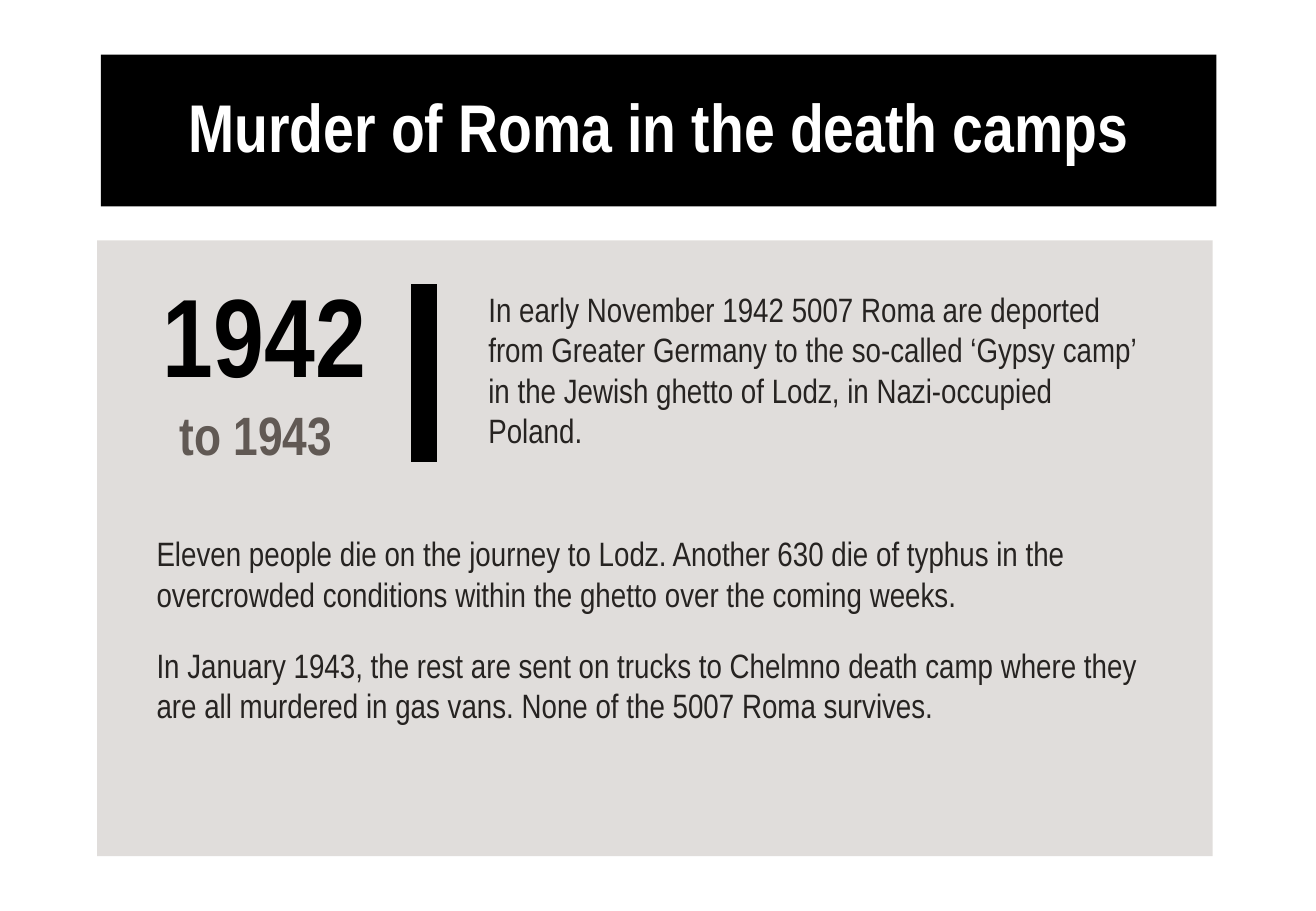
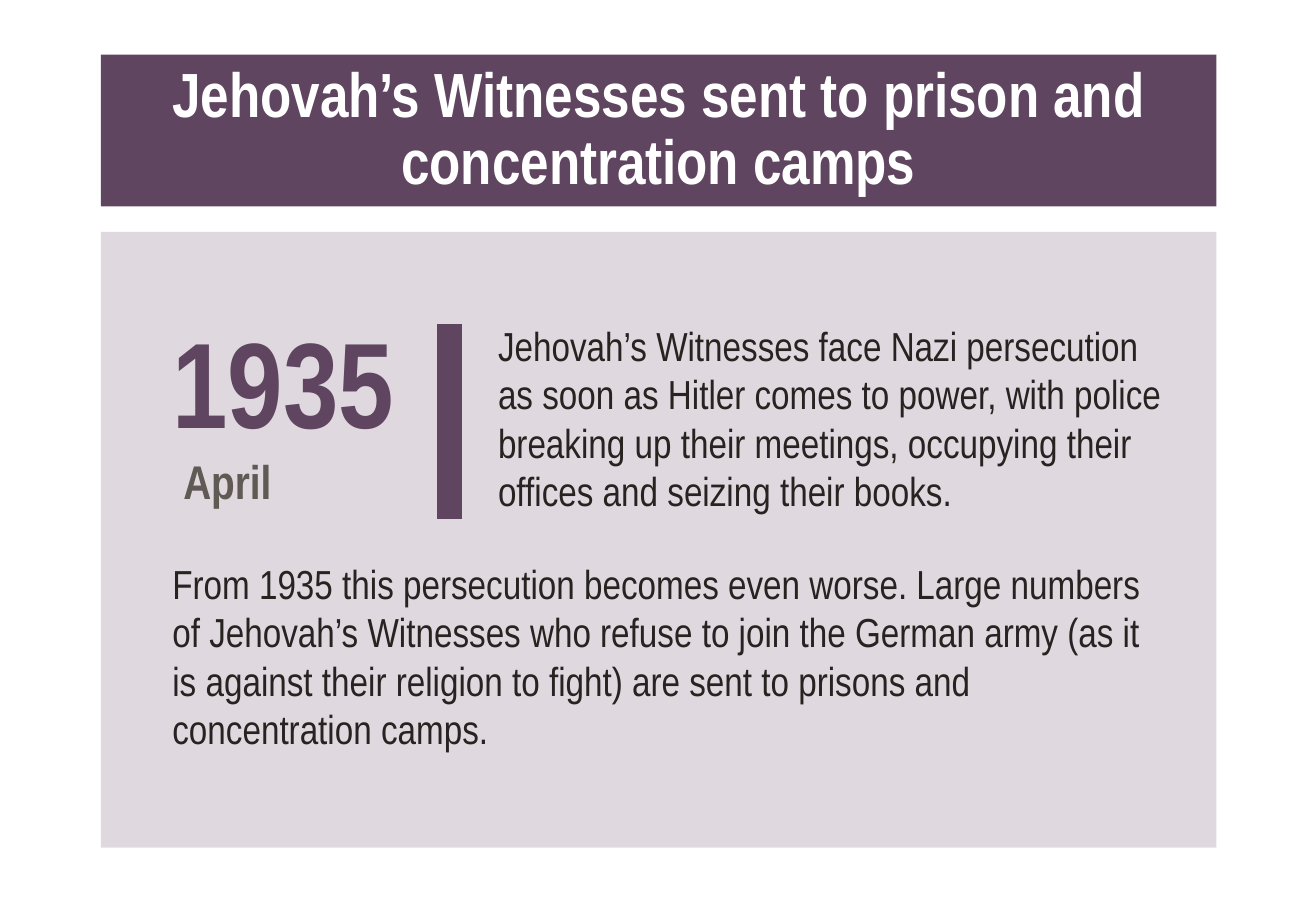
from dataclasses import dataclass
from typing import Optional

from lxml import etree
from pptx import Presentation
from pptx import util as u
from pptx.dml.color import RGBColor
from pptx.enum import shapes, text
from pptx.oxml.ns import qn

PX = 9144  # EMU in one px, 100 px to the inch
FONT = "Arial Narrow"
COLOURS = {
    "black": "000000",
    "white": "FFFFFF",
    "plum": "5F4560",
    "stone": "99908A",
    "ink": "262321",
    "grey": "615954",
}


@dataclass(frozen=True)
class Box:
    left: int
    top: int
    width: int
    height: int

    def emu(self) -> tuple[int, ...]:
        return tuple(length * PX for length in (self.left, self.top, self.width, self.height))


@dataclass(frozen=True)
class Style:
    size: int
    colour: str
    bold: bool = False
    line_spacing: Optional[float] = None
    space_before: int = 0
    space_after: int = 0
    indent: int = 0


@dataclass(frozen=True)
class Bar:
    x: int
    top: int
    bottom: int


@dataclass(frozen=True)
class Event:
    title: str
    title_size: int
    accent: str
    panel: Box
    panel_colour: str
    panel_opacity: int
    date: tuple[str, str]
    date_box: Box
    date_styles: tuple[Style, Style]
    bar: Bar
    lead: str
    lead_box: Box
    body: tuple[str, ...]
    body_box: Box
    body_style: Style


TITLE_BOX = Box(83, 45, 918, 125)
EVENTS = (
    Event(
        title="Murder of Roma in the death camps",
        title_size=40,
        accent="black",
        panel=Box(80, 198, 918, 507),
        panel_colour="stone",
        panel_opacity=30,
        date=("1942", "to 1943"),
        date_box=Box(124, 218, 252, 188),
        date_styles=(
            Style(66, "black", True, 0.8),
            Style(32, "grey", True, 0.8, space_before=9, indent=14),
        ),
        bar=Bar(349, 234, 380),
        lead="In early November 1942 5007 Roma are deported from Greater Germany to the "
        "so-called ‘Gypsy camp’ in the Jewish ghetto of Lodz, in Nazi-occupied Poland.",
        lead_box=Box(392, 210, 559, 188),
        body=(
            "Eleven people die on the journey to Lodz. Another 630 die of typhus in the "
            "overcrowded conditions within the ghetto over the coming weeks.",
            "In January 1943, the rest are sent on trucks to Chelmno death camp where they "
            "are all murdered in gas vans. None of the 5007 Roma survives.",
        ),
        body_box=Box(119, 434, 856, 170),
        body_style=Style(20, "ink", space_after=18),
    ),
    Event(
        title="Jehovah’s Witnesses sent to prison and\vconcentration camps",
        title_size=37,
        accent="plum",
        panel=Box(83, 191, 918, 507),
        panel_colour="plum",
        panel_opacity=20,
        date=("1935", "April"),
        date_box=Box(132, 242, 252, 188),
        date_styles=(Style(72, "plum", True), Style(28, "grey", True, indent=9)),
        bar=Bar(370, 267, 427),
        lead="Jehovah’s Witnesses face Nazi persecution\vas soon as Hitler comes to power, "
        "with police breaking up their meetings, occupying their offices and seizing their books.",
        lead_box=Box(400, 250, 599, 188),
        body=(
            "From 1935 this persecution becomes even worse. Large numbers",
            "of Jehovah’s Witnesses who refuse to join the German army (as it is against "
            "their religion to fight) are sent to prisons and concentration camps.",
        ),
        body_box=Box(132, 455, 835, 188),
        body_style=Style(24, "ink"),
    ),
)


def rgb(colour: str) -> RGBColor:
    return RGBColor.from_string(COLOURS[colour])


def format_paragraph(paragraph, style: Style) -> None:
    if style.indent:
        paragraph._p.get_or_add_pPr().set("marL", str(style.indent * PX))
    if style.line_spacing:
        paragraph.line_spacing = style.line_spacing
    if style.space_before:
        paragraph.space_before = u.Pt(style.space_before)
    if style.space_after:
        paragraph.space_after = u.Pt(style.space_after)
    for run in paragraph.runs:
        run.font.name = FONT
        run.font.size = u.Pt(style.size)
        run.font.bold = style.bold
        run.font.color.rgb = rgb(style.colour)


def add_text(parent, box: Box, lines: tuple[str, ...], styles: tuple[Style, ...],
             anchor=text.MSO_ANCHOR.MIDDLE) -> None:
    """Add a text box with one paragraph for each line and its style."""
    frame = parent.add_textbox(*box.emu()).text_frame
    frame.word_wrap = True
    frame.vertical_anchor = anchor
    frame.text = "\n".join(lines)
    for paragraph, style in zip(frame.paragraphs, styles):
        format_paragraph(paragraph, style)


def add_panel(slide, event: Event) -> None:
    panel = slide.shapes.add_shape(shapes.MSO_SHAPE.RECTANGLE, *event.panel.emu())
    panel.shadow.inherit = False
    panel.line.fill.background()
    panel.fill.solid()
    panel.fill.fore_color.rgb = rgb(event.panel_colour)
    colour = panel._element.spPr.find(qn("a:solidFill"))[0]
    etree.SubElement(colour, qn("a:alpha")).set("val", str(event.panel_opacity * 1000))


def set_title(slide, event: Event) -> None:
    title = slide.shapes.title
    title.left, title.top, title.width, title.height = TITLE_BOX.emu()
    title.fill.solid()
    title.fill.fore_color.rgb = rgb(event.accent)
    frame = title.text_frame
    frame.auto_size = text.MSO_AUTO_SIZE.NONE
    frame.word_wrap = True
    frame.vertical_anchor = text.MSO_ANCHOR.MIDDLE
    paragraph = frame.paragraphs[0]
    paragraph.text = event.title
    paragraph.alignment = text.PP_ALIGN.CENTER
    format_paragraph(paragraph, Style(event.title_size, "white", True, 0.9))


def add_bar(parent, bar: Bar, colour: str) -> None:
    line = parent.add_connector(shapes.MSO_CONNECTOR.STRAIGHT, bar.x * PX, bar.top * PX,
                                bar.x * PX, bar.bottom * PX)
    line.line.width = u.Pt(15)
    line.line.color.rgb = rgb(colour)
    etree.SubElement(line._element.spPr, qn("a:effectLst"))


def add_event(presentation, event: Event) -> None:
    slide = presentation.slides.add_slide(presentation.slide_layouts[5])
    add_panel(slide, event)
    set_title(slide, event)
    header = slide.shapes.add_group_shape().shapes
    add_text(header, event.date_box, event.date, event.date_styles)
    add_bar(header, event.bar, event.accent)
    add_text(header, event.lead_box, (event.lead,), (Style(event.body_style.size, "ink"),))
    add_text(slide.shapes, event.body_box, event.body,
             (event.body_style,) * len(event.body), text.MSO_ANCHOR.TOP)


def main() -> None:
    presentation = Presentation()
    presentation.slide_width = 1083 * PX
    presentation.slide_height = 750 * PX
    for event in EVENTS:
        add_event(presentation, event)
    presentation.save("out.pptx")


if __name__ == "__main__":
    main()
